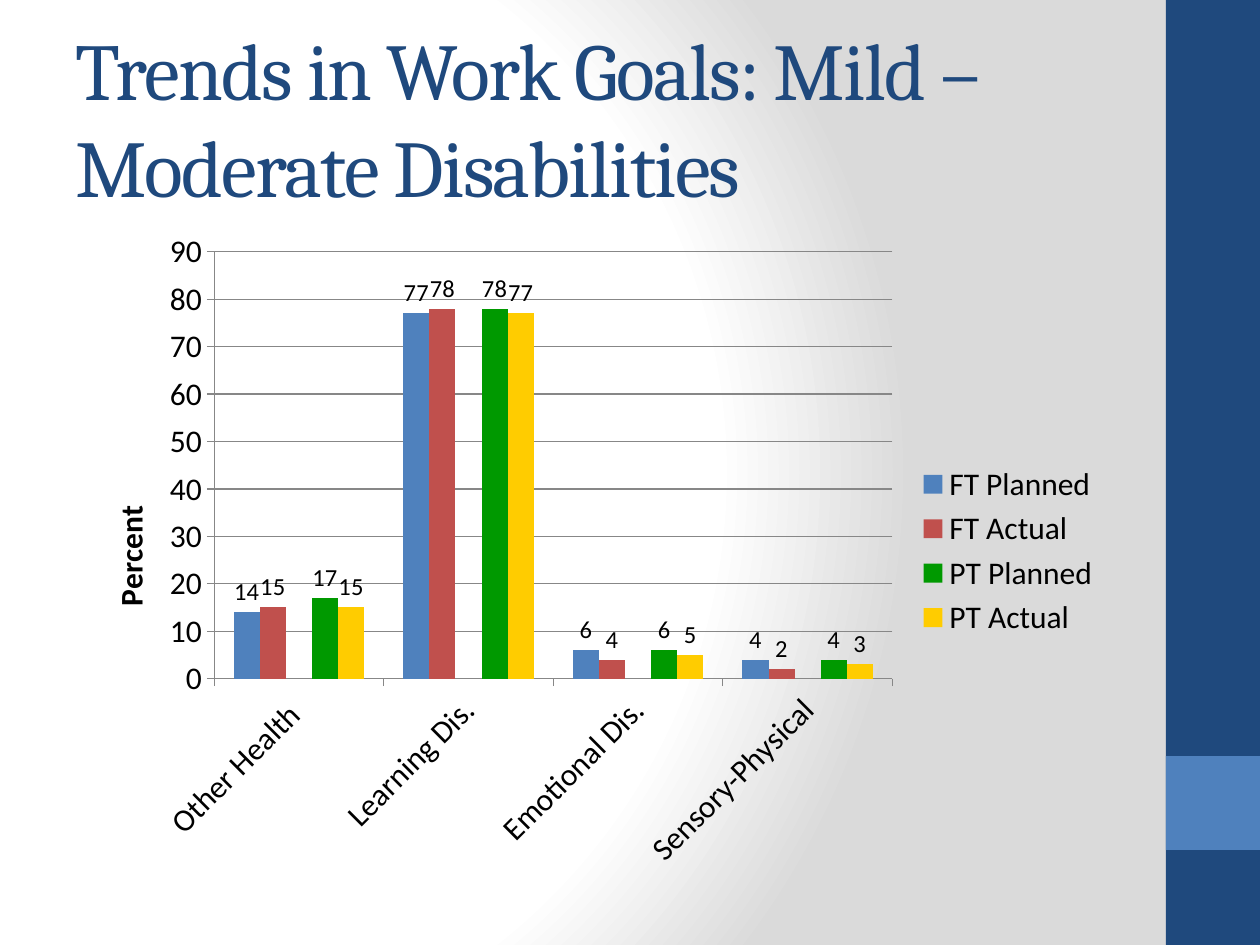
from pptx import Presentation
from pptx.chart.data import CategoryChartData
from pptx.dml.color import RGBColor
from pptx.enum.chart import XL_CHART_TYPE as ChartType, XL_LABEL_POSITION as LabelPosition
from pptx.enum.chart import XL_LEGEND_POSITION as LegendPosition, XL_TICK_MARK as TickMark
from pptx.enum.shapes import MSO_SHAPE as Shape
from pptx.enum.text import MSO_ANCHOR as Anchor
from pptx.oxml import parse_xml
from pptx.oxml.ns import nsdecls
from pptx.util import Pt

PX = 914400 // 126
COLORS = {"navy": "1F497D", "blue": "4F81BD", "red": "C0504D", "olive": "9BBB59",
          "green": "009900", "yellow": "FFCC00", "black": "000000",
          "white": "FFFFFF", "gray": "DADADA", "line": "878787"}
TITLE = "Trends in Work Goals: Mild – Moderate Disabilities"
TITLE_BOX = (63, 38, 1050, 157)
CHART_BOX = (63, 220, 1050, 662)
PLOT_BOX = (214, 252, 678, 427)
AXIS_TITLE_AT = (103, 500)
BANDS = [("navy", (1166, 0, 94, 945)), ("blue", (1166, 756, 94, 94))]
CATEGORIES = ["Other Health ", "Learning Dis.", "Emotional Dis.", "Sensory-Physical"]
SPACER = "Series 3"
SERIES = [
    ("FT Planned", "blue", (14, 77, 6, 4)),
    ("FT Actual", "red", (15, 78, 4, 2)),
    (SPACER, "olive", (None,) * 4),
    ("PT Planned", "green", (17, 78, 6, 4)),
    ("PT Actual", "yellow", (15, 77, 5, 3)),
]


def emu(box):
    return [value * PX for value in box]


def color(name):
    return RGBColor.from_string(COLORS[name])


def apply(target, **values):
    for name, value in values.items():
        setattr(target, name, value)


def paint(fill, name):
    fill.solid()
    fill.fore_color.rgb = color(name)


def style_font(font, size, name="black", face="Calibri", bold=False):
    apply(font, size=Pt(size), name=face, bold=bold)
    font.color.rgb = color(name)


def manual_layout(box, inner=False):
    left, top, width, height = CHART_BOX
    fractions = [(box[0] - left) / width, (box[1] - top) / height]
    fractions += [part / whole for part, whole in zip(box[2:], (width, height))]
    target = '<c:layoutTarget val="inner"/>' if inner else ""
    modes = '<c:xMode val="edge"/><c:yMode val="edge"/>'
    values = "".join(f'<c:{key} val="{value:.3f}"/>' for key, value in zip("xywh", fractions))
    return parse_xml(f'<c:layout {nsdecls("c")}><c:manualLayout>{target}{modes}{values}'
                     '</c:manualLayout></c:layout>')


def place(parent, layout, after=None):
    for old in parent.xpath("c:layout"):
        parent.remove(old)
    if after is None:
        parent.insert(0, layout)
    else:
        after.addnext(layout)


def add_background(slide):
    stops = "".join(f'<a:gs pos="{position}"><a:srgbClr val="{COLORS[name]}"/></a:gs>'
                    for position, name in ((0, "white"), (75000, "white"), (100000, "gray")))
    slide.element.cSld.insert(0, parse_xml(
        f'<p:bg {nsdecls("p", "a")}><p:bgPr><a:gradFill rotWithShape="1"><a:gsLst>{stops}</a:gsLst>'
        '<a:path path="circle"><a:fillToRect l="20000" t="50000" r="100000" b="50000"/></a:path>'
        '</a:gradFill><a:effectLst/></p:bgPr></p:bg>'))


def add_bands(slide):
    for name, box in BANDS:
        band = slide.shapes.add_shape(Shape.RECTANGLE, *emu(box))
        band.shadow.inherit = False
        paint(band.fill, name)
        band.line.fill.background()


def add_title(slide):
    frame = slide.shapes.add_textbox(*emu(TITLE_BOX)).text_frame
    apply(frame, word_wrap=True, vertical_anchor=Anchor.MIDDLE)
    run = frame.paragraphs[0].add_run()
    run.text = TITLE
    style_font(run.font, 46, "navy", "Cambria")
    run.font._element.set("spc", "-100")


def style_axes(chart):
    category, value = chart.category_axis, chart.value_axis
    for axis in (category, value):
        apply(axis, major_tick_mark=TickMark.OUTSIDE, minor_tick_mark=TickMark.NONE)
        style_font(axis.tick_labels.font, 18)
        axis.format.line.color.rgb = color("line")
    category.tick_labels.font._element.xpath("ancestor::c:txPr/a:bodyPr")[0].set("rot", "-2700000")
    apply(value, minimum_scale=0, maximum_scale=90, major_unit=10, has_major_gridlines=True)
    value.major_gridlines.format.line.color.rgb = color("line")
    apply(value.tick_labels, number_format="0", number_format_is_linked=False)
    title = value.axis_title
    title.text_frame.text = "Percent"
    style_font(title.text_frame.paragraphs[0].runs[0].font, 18, bold=True)
    body = title._element.xpath(".//a:bodyPr")[0]
    body.set("rot", "-5400000")
    body.set("vert", "horz")
    place(title._element, manual_layout(AXIS_TITLE_AT), title._element.xpath("c:tx")[0])


def style_series(plot):
    apply(plot, gap_width=150, overlap=0, vary_by_categories=False)
    for series, (name, fill, _) in zip(plot.series, SERIES):
        paint(series.format.fill, fill)
        if name != SPACER:
            labels = series.data_labels
            apply(labels, show_value=True, position=LabelPosition.OUTSIDE_END,
                  number_format="0", number_format_is_linked=False)
            style_font(labels.font, 14)


def style_legend(chart):
    chart.has_legend = True
    legend = chart.legend
    apply(legend, position=LegendPosition.RIGHT, include_in_layout=False)
    style_font(legend.font, 18)
    hidden = [name for name, _, _ in SERIES].index(SPACER)
    legend._element.xpath("c:legendPos")[0].addnext(parse_xml(
        f'<c:legendEntry {nsdecls("c")}><c:idx val="{hidden}"/><c:delete val="1"/></c:legendEntry>'))


def add_chart(slide):
    data = CategoryChartData(number_format="0")
    data.categories = CATEGORIES
    for name, _, values in SERIES:
        data.add_series(name, values)
    chart = slide.shapes.add_chart(ChartType.COLUMN_CLUSTERED, *emu(CHART_BOX), data).chart
    chart.has_title = False
    style_font(chart.font, 18)
    style_axes(chart)
    style_series(chart.plots[0])
    style_legend(chart)
    place(chart._chartSpace.xpath("c:chart/c:plotArea")[0], manual_layout(PLOT_BOX, inner=True))


def main():
    presentation = Presentation()
    apply(presentation, slide_width=1260 * PX, slide_height=945 * PX)
    slide = presentation.slides.add_slide(presentation.slide_layouts[6])
    add_background(slide)
    add_bands(slide)
    add_title(slide)
    add_chart(slide)
    presentation.save("out.pptx")


if __name__ == "__main__":
    main()
